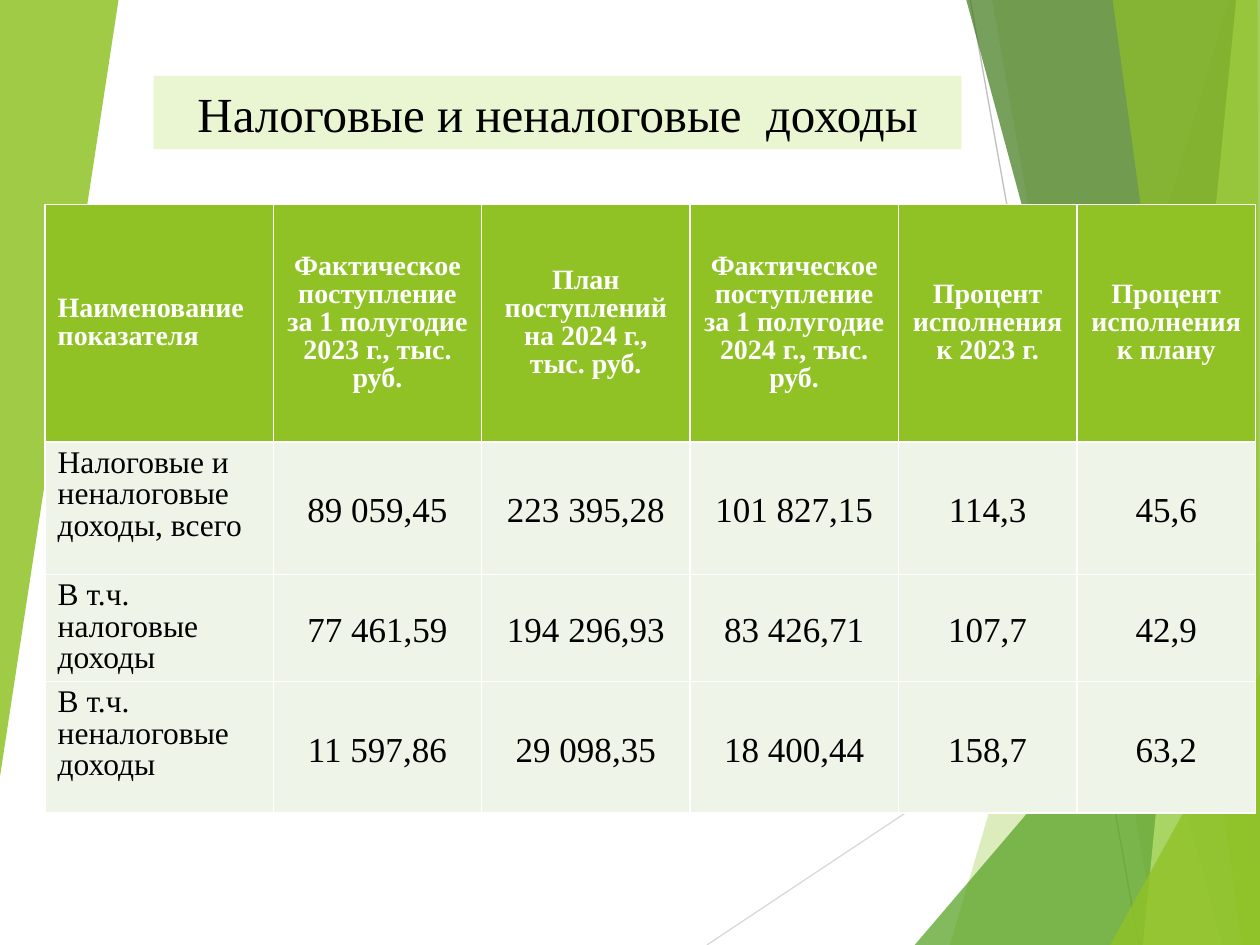
from lxml import etree
from pptx import Presentation
from pptx.dml.color import RGBColor
from pptx.enum.shapes import MSO_CONNECTOR, MSO_SHAPE
from pptx.enum.text import MSO_ANCHOR, PP_ALIGN
from pptx.oxml.ns import qn
from pptx.util import Cm, Pt

LEFT, CENTER = PP_ALIGN.LEFT, PP_ALIGN.CENTER
TOP, MIDDLE = MSO_ANCHOR.TOP, MSO_ANCHOR.MIDDLE
STRAIGHT, RECTANGLE = MSO_CONNECTOR.STRAIGHT, MSO_SHAPE.RECTANGLE

FONT = "Times New Roman"
WIDTH, HEIGHT = 25.4, 19.05
COLORS = {
    "lime": "90C226", "green": "54A021", "forest": "3F7819", "pale": "C0E474",
    "title": "EAF6D1", "body": "EEF4E8", "white": "FFFFFF", "black": "000000",
    "light gray": "D9D9D9", "gray": "BFBFBF",
}

TITLE = "Налоговые и неналоговые  доходы"
HEADERS = [
    "Наименование показателя",
    "Фактическое поступление за 1 полугодие 2023 г., тыс. руб.",
    "План поступлений на 2024 г., тыс. руб.",
    "Фактическое поступление за 1 полугодие 2024 г., тыс. руб.",
    "Процент исполнения к 2023 г.",
    "Процент исполнения к плану",
]
ROWS = [
    ["Налоговые и неналоговые доходы, всего",
     "89 059,45", "223 395,28", "101 827,15", "114,3", "45,6"],
    ["В т.ч. налоговые доходы",
     "77 461,59", "194 296,93", "83 426,71", "107,7", "42,9"],
    ["В т.ч. неналоговые доходы",
     "11 597,86", "29 098,35", "18 400,44", "158,7", "63,2"],
]
COLUMN_WIDTHS = [4.6, 4.2, 4.2, 4.2, 3.6, 3.6]
ROW_HEIGHTS = [4.79, 2.67, 2.16, 2.65]
TABLE_LEFT, TABLE_TOP = 0.91, 4.12

RAYS = [
    ((14.25, HEIGHT), (WIDTH, 11.63), "light gray"),
    ((19.56, 0), (22.96, HEIGHT), "gray"),
]


def right_band(top, bottom, top_right=WIDTH):
    return [(top, 0), (bottom, HEIGHT), (WIDTH, HEIGHT), (top_right, 0)]


def right_corner(bottom, side):
    return [(bottom, HEIGHT), (WIDTH, side), (WIDTH, HEIGHT)]


FACETS = [
    (right_band(24.77, 19.15), "lime", 30),
    (right_band(20.0, 23.34), "lime", 20),
    (right_corner(18.44, 10.9), "green", 72),
    (right_band(19.48, 24.64), "forest", 70),
    (right_band(24.92, 23.04), "pale", 70),
    (right_band(22.43, 25.04, 25.35), "lime", 65),
    (right_corner(22.38, 13.59), "lime", 80),
    ([(0, 0), (2.39, 0), (0, 15.66)], "lime", 85),
]


def color(name):
    return RGBColor.from_string(COLORS[name])


def paint(fill, name):
    fill.solid()
    fill.fore_color.rgb = color(name)


def write(frame, text, *, size, tint="black", bold=False, align=CENTER, spacing=1.0):
    frame.word_wrap = True
    paragraph = frame.paragraphs[0]
    paragraph.alignment = align
    paragraph.line_spacing = spacing
    run = paragraph.add_run()
    run.text = text
    run.font.name = FONT
    run.font.size = Pt(size)
    run.font.bold = bold
    run.font.color.rgb = color(tint)


def add_ray(slide, start, end, tint):
    ray = slide.shapes.add_connector(STRAIGHT, *map(Cm, start + end))
    ray.line.color.rgb = color(tint)
    ray.line.width = Pt(0.75)
    etree.SubElement(ray._element.spPr, qn("a:effectLst"))


def add_facet(slide, points, tint, opacity):
    corners = [(Cm(x), Cm(y)) for x, y in points]
    builder = slide.shapes.build_freeform(*corners[0])
    builder.add_line_segments(corners[1:], close=True)
    facet = builder.convert_to_shape()
    facet.shadow.inherit = False
    facet.line.fill.background()
    paint(facet.fill, tint)
    solid_color = facet._element.spPr.find(".//" + qn("a:srgbClr"))
    etree.SubElement(solid_color, qn("a:alpha"), val=str(opacity * 1000))


def add_borders(cell):
    properties = cell._tc.get_or_add_tcPr()
    for index, side in enumerate(("lnL", "lnR", "lnT", "lnB")):
        border = etree.Element(qn(f"a:{side}"), w=str(Pt(1)))
        solid_fill = etree.SubElement(border, qn("a:solidFill"))
        etree.SubElement(solid_fill, qn("a:srgbClr"), val=COLORS["white"])
        properties.insert(index, border)


def add_title(slide):
    title = slide.shapes.add_shape(RECTANGLE, Cm(3.1), Cm(1.53), Cm(16.28), Cm(1.48))
    title.shadow.inherit = False
    title.line.fill.background()
    paint(title.fill, "title")
    title.text_frame.vertical_anchor = MIDDLE
    write(title.text_frame, TITLE, size=28)


def add_income_table(slide):
    content = [HEADERS] + ROWS
    table = slide.shapes.add_table(
        len(content), len(HEADERS), Cm(TABLE_LEFT), Cm(TABLE_TOP),
        Cm(sum(COLUMN_WIDTHS)), Cm(sum(ROW_HEIGHTS))).table
    for column, width in zip(table.columns, COLUMN_WIDTHS):
        column.width = Cm(width)
    for row, height in zip(table.rows, ROW_HEIGHTS):
        row.height = Cm(height)
    for row_index, texts in enumerate(content):
        for column_index, text in enumerate(texts):
            cell = table.cell(row_index, column_index)
            is_header, is_label = row_index == 0, column_index == 0
            add_borders(cell)
            paint(cell.fill, "lime" if is_header else "body")
            cell.vertical_anchor = TOP if is_label and not is_header else MIDDLE
            write(cell.text_frame, text,
                  size=16 if is_header else 18 if is_label else 20,
                  tint="white" if is_header else "black",
                  bold=is_header,
                  align=LEFT if is_label else CENTER,
                  spacing=0.9 if is_header or is_label else 1.15)


def main():
    presentation = Presentation()
    presentation.slide_width, presentation.slide_height = Cm(WIDTH), Cm(HEIGHT)
    slide = presentation.slides.add_slide(presentation.slide_layouts[6])
    paint(slide.background.fill, "white")
    for ray in RAYS:
        add_ray(slide, *ray)
    for facet in FACETS:
        add_facet(slide, *facet)
    add_title(slide)
    add_income_table(slide)
    presentation.save("out.pptx")


if __name__ == "__main__":
    main()
